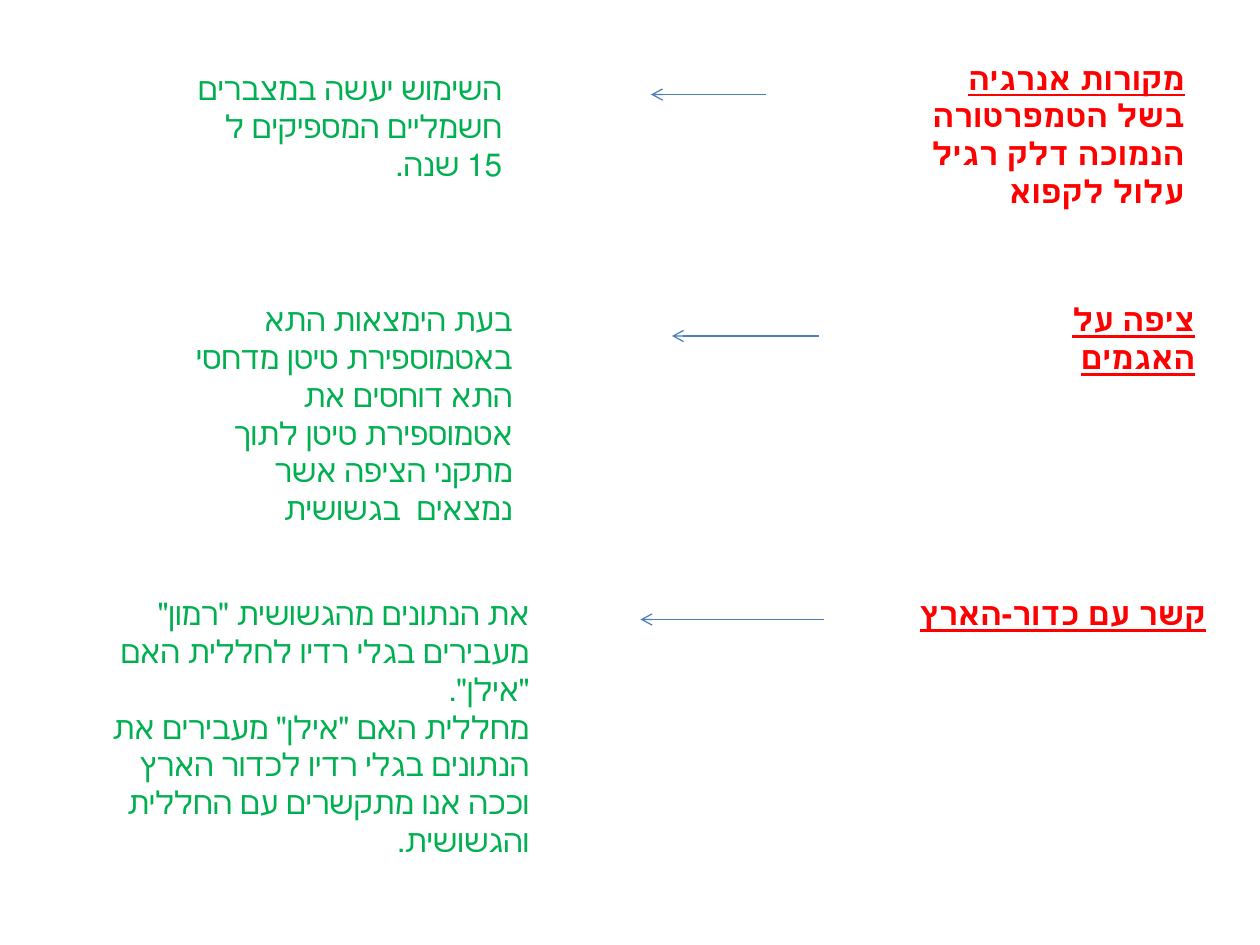
from lxml import etree
from pptx import Presentation, util as u
from pptx.dml.color import RGBColor
from pptx.enum import shapes, text
from pptx.oxml.ns import qn

RED, GREEN, BLUE = "FF0000", "00B050", "4B7EBC"

deck = Presentation()
deck.slide_width, deck.slide_height = u.Inches(10), u.Inches(7.5)
slide = deck.slides.add_slide(deck.slide_layouts[6])
cell = deck.slide_width / 120  # square grid, 120 columns by 90 rows


def grid(*cells):
    return [round(n * cell) for n in cells]


def write(group, place, lines, paras, color, bold=False):
    """Add right-to-left text; the first paragraph of bold text is underlined."""
    left, top, width = grid(*place)
    box = group.shapes.add_textbox(left, top, width, u.Inches(0.11 + 0.3 * lines))
    frame = box.text_frame
    frame.word_wrap = True
    frame.auto_size = text.MSO_AUTO_SIZE.SHAPE_TO_FIT_TEXT
    for i, words in enumerate(paras):
        para = frame.add_paragraph() if i else frame.paragraphs[0]
        para.text = words
        para.alignment = text.PP_ALIGN.RIGHT
        para._p.pPr.set("rtl", "1")
        font = para.font
        font.size, font.bold, font.name = u.Pt(18), bold, "Arial"
        font.underline = bold and i == 0
        font.color.rgb = RGBColor.from_string(color)


# Each row: (heading place, lines, text), (arrow start, end, height), (answer place, lines, text)
# Places are left, top and width in grid cells.
rows = [
    (((80.5, 56, 35.5), 1, ["קשר עם כדור-הארץ"]),
     (78.5, 61, 59),
     ((8, 56, 43.6), 7,
      ['את הנתונים מהגשושית "רמון" מעבירים בגלי רדיו לחללית האם "אילן". \n'
       'מחללית האם "אילן" מעבירים את הנתונים בגלי רדיו לכדור הארץ '
       'וככה אנו מתקשרים עם החללית והגשושית.'])),
    (((90, 28, 25), 2, ["ציפה על האגמים"]),
     (78, 64, 32),
     ((16, 28, 34), 6,
      ["בעת הימצאות התא באטמוספירת טיטן מדחסי התא דוחסים את "
       "אטמוספירת טיטן לתוך מתקני הציפה אשר נמצאים  בגשושית"])),
    (((81, 5, 33), 4,
      ["מקורות אנרגיה", "בשל הטמפרטורה הנמוכה דלק רגיל עלול לקפוא "]),
     (73, 62, 9),
     ((17, 6, 32), 3, ["השימוש יעשה במצברים חשמליים המספיקים ל 15 שנה."])),
]

for head, (start, end, y), answer in rows:
    group = slide.shapes.add_group_shape()
    write(group, *head, RED, bold=True)
    arrow = group.shapes.add_connector(
        shapes.MSO_CONNECTOR.STRAIGHT, *grid(start, y, end, y))
    arrow.line.color.rgb = RGBColor.from_string(BLUE)
    arrow.line.width = u.Pt(0.75)
    etree.SubElement(arrow.line._get_or_add_ln(), qn("a:tailEnd"), type="arrow")
    etree.SubElement(arrow._element.spPr, qn("a:effectLst"))
    write(group, *answer, GREEN)

deck.save("out.pptx")
